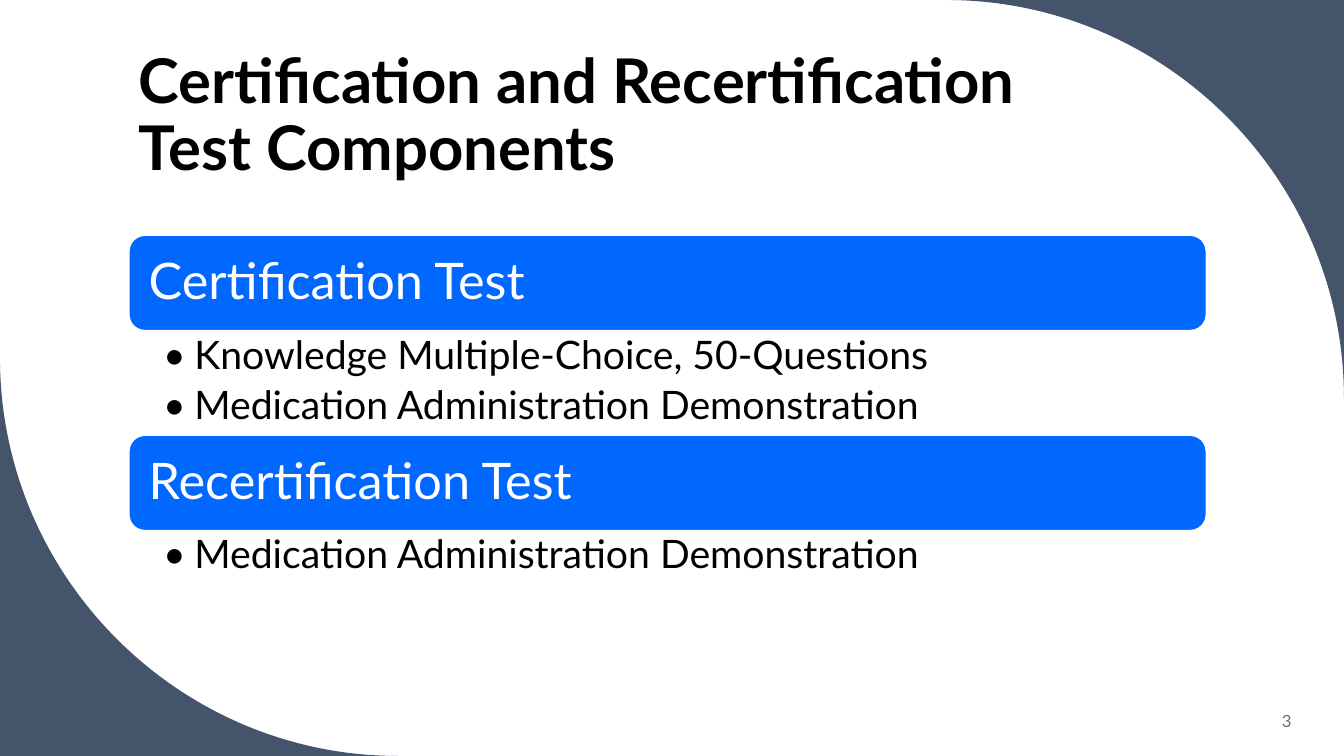
from dataclasses import dataclass

from lxml.etree import SubElement
from pptx import Presentation
from pptx.dml.color import RGBColor as Rgb
from pptx.enum.shapes import MSO_SHAPE as Shape
from pptx.enum.text import MSO_ANCHOR as Anchor, PP_ALIGN as Align
from pptx.oxml.ns import qn
from pptx.util import Cm, Pt

WIDE, HIGH = 33.87, 19.05
LEFT, SPAN = 3.25, 27.15
TOP, BAR = 5.93, 2.4
ARC = 10.03
BEND = 0.55
FONT = "Lato"
INK = {
    "slate": "44546A",
    "blue": "0068FF",
    "white": "FFFFFF",
    "black": "000000",
    "gray": "637183",
}


@dataclass
class Corner:
    """Slide corner, with the two ends of the arc that cuts it off."""
    tip: tuple[float, float]
    start: tuple[float, float]
    end: tuple[float, float]


@dataclass
class Part:
    title: str
    items: list[str]
    depth: float
    inset: float


CORNERS = [
    Corner((WIDE, 0), (WIDE - ARC, 0), (WIDE, ARC)),
    Corner((0, HIGH), (ARC, HIGH), (0, HIGH - ARC)),
]
PARTS = [
    Part("Certification Test",
         ["Knowledge Multiple-Choice, 50-Questions",
          "Medication Administration Demonstration"], 2.64, 0.13),
    Part("Recertification Test",
         ["Medication Administration Demonstration"], 1.65, 0.1),
]


def paint(shape, fill: str) -> None:
    shape.shadow.inherit = False
    shape.fill.solid()
    shape.fill.fore_color.rgb = Rgb.from_string(INK[fill])


def add_dot(para) -> None:
    """Give a paragraph a hanging bullet."""
    para.level = 1
    props = para._p.get_or_add_pPr()
    props.set("marL", str(Cm(0.79)))
    props.set("indent", str(Cm(-0.79)))
    SubElement(props, qn("a:buFont"), typeface=FONT)
    SubElement(props, qn("a:buChar"), char="•")


def write(shape, lines: list[str], *, size: float, color: str = "black",
          bold: bool = False, align=Align.LEFT, anchor=Anchor.TOP,
          pad: tuple = (0.25, 0.13, 0.25, 0.13), lead: float = 0.9,
          after: float = 0, dots: bool = False) -> None:
    """Fill a shape with paragraphs; pad runs left, top, right, bottom in cm."""
    frame = shape.text_frame
    frame.word_wrap = True
    frame.vertical_anchor = anchor
    (frame.margin_left, frame.margin_top,
     frame.margin_right, frame.margin_bottom) = map(Cm, pad)
    for i, line in enumerate(lines):
        para = frame.add_paragraph() if i else frame.paragraphs[0]
        para.text = line
        para.alignment = align
        para.line_spacing = lead
        para.space_after = Pt(after)
        if dots:
            add_dot(para)
        for font in [para.font, *(run.font for run in para.runs)]:
            font.name = FONT
            font.size = Pt(size)
            font.bold = bold
            font.color.rgb = Rgb.from_string(INK[color])


def box(slide, x: float, y: float, wide: float, high: float):
    return slide.shapes.add_textbox(Cm(x), Cm(y), Cm(wide), Cm(high))


def draw_corner(slide, corner: Corner) -> None:
    """Draw the outline as a triangle, then bend its long side to an arc."""
    pen = slide.shapes.build_freeform(*map(Cm, corner.tip))
    pen.add_line_segments([tuple(map(Cm, corner.start)),
                           tuple(map(Cm, corner.end))])
    shape = pen.convert_to_shape()
    paint(shape, "slate")
    shape.line.fill.background()

    spots = list(shape._element.iter(qn("a:pt")))
    tip, start, end = [(int(p.get("x")), int(p.get("y"))) for p in spots]
    curve = spots[2].getparent()
    curve.tag = qn("a:cubicBezTo")
    curve.remove(spots[2])
    pulls = [tuple(round(a + BEND * (b - a)) for a, b in zip(spot, tip))
             for spot in (start, end)]
    for x, y in [*pulls, end]:
        SubElement(curve, qn("a:pt"), x=str(x), y=str(y))


def draw_part(slide, part: Part, top: float) -> float:
    """Draw a bar with its list below and return the bottom edge."""
    bar = slide.shapes.add_shape(
        Shape.ROUNDED_RECTANGLE, Cm(LEFT), Cm(top), Cm(SPAN), Cm(BAR))
    paint(bar, "blue")
    bar.line.color.rgb = Rgb.from_string(INK["white"])
    bar.line.width = Pt(1)
    write(bar, [part.title], size=36, color="white", anchor=Anchor.MIDDLE,
          pad=(0.38, 0.38, 0.38, 0.38))
    items = box(slide, LEFT, top + BAR, SPAN, part.depth)
    write(items, part.items, size=28, after=5.6, dots=True,
          pad=(0.86, part.inset, 0.7, part.inset))
    return top + BAR + part.depth


def main() -> None:
    deck = Presentation()
    deck.slide_width, deck.slide_height = Cm(WIDE), Cm(HIGH)
    slide = deck.slides.add_slide(deck.slide_layouts[6])
    for corner in CORNERS:
        draw_corner(slide, corner)
    write(box(slide, LEFT, 1.07, SPAN, 3.68),
          ["Certification and Recertification \vTest Components"],
          size=44, bold=True, anchor=Anchor.BOTTOM)
    write(box(slide, 28.2, 17.65, 4.6, 1.02), ["3"], size=12, color="gray",
          align=Align.RIGHT, anchor=Anchor.MIDDLE, lead=1.0, after=6)
    top = TOP
    for part in PARTS:
        top = draw_part(slide, part, top)
    deck.save("out.pptx")


if __name__ == "__main__":
    main()
